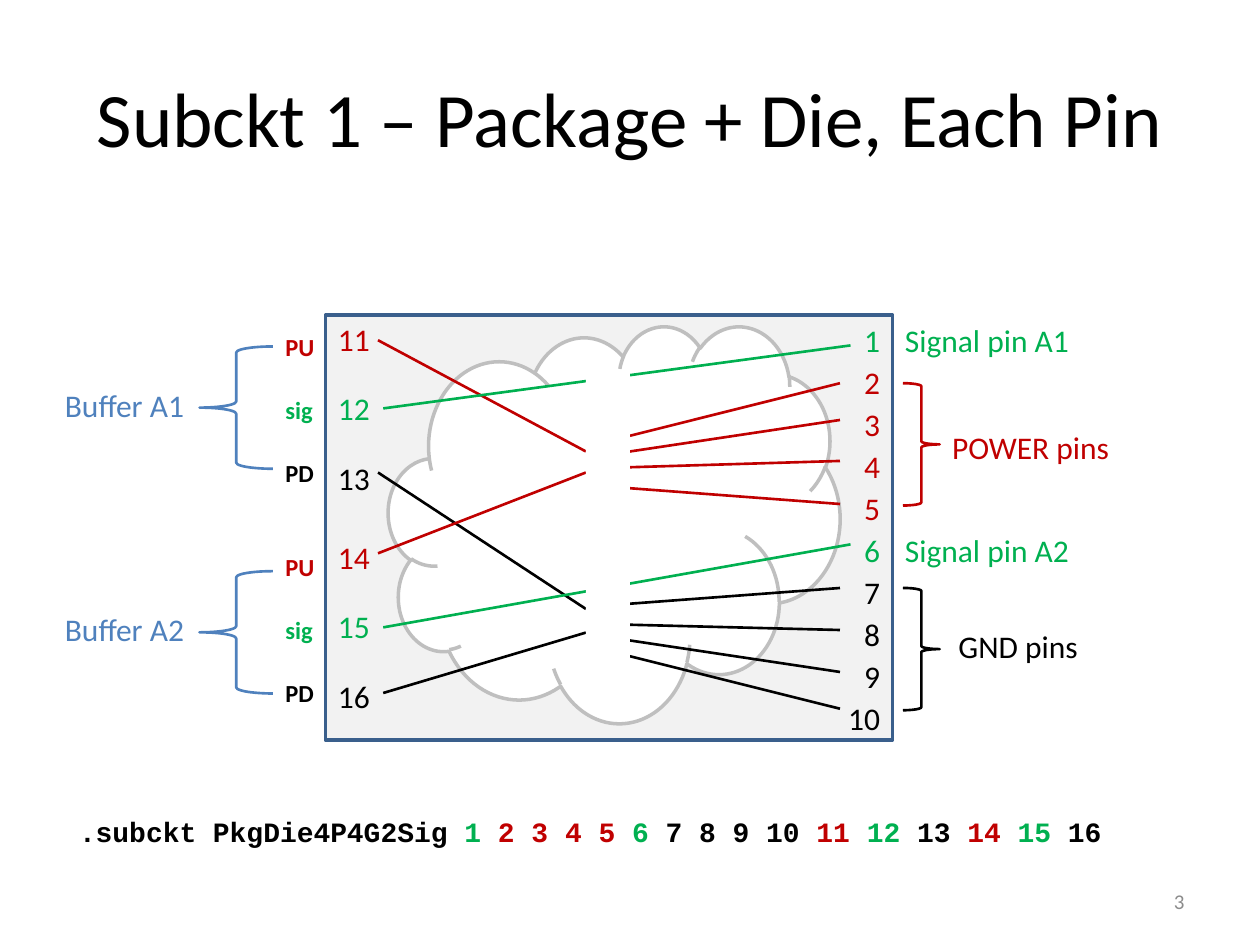
from pptx import Presentation, util as u
from pptx.dml.color import RGBColor
from pptx.enum import shapes, text
from pptx.oxml.ns import qn
from lxml import etree

COLS, ROWS = 240, 180  # slide grid
RED, GREEN, BLACK, BLUE = "C00000", "00B050", "000000", "4F81BD"
MS = shapes.MSO_SHAPE

prs = Presentation()
prs.slide_width, prs.slide_height = u.Inches(10), u.Inches(7.5)


def col(n):
    return round(prs.slide_width * n / COLS)


def row(n):
    return round(prs.slide_height * n / ROWS)


def color(value):
    return RGBColor.from_string(value)


def frame(x, y, w, h):
    return col(x), row(y), col(w), row(h)


def style(obj, values):
    for name, value in values.items():
        setattr(obj, name, value)


def add_run(p, words, ink, size=18, font="Calibri", bold=False):
    r = p.add_run()
    r.text = words
    style(r.font, {"size": u.Pt(size), "name": font, "bold": bold})
    r.font.color.rgb = color(ink)


def label(s, box, paragraphs, align="LEFT", after=0, wrap=False, **font):
    """Each paragraph is a list of (words, colour) runs."""
    tf = s.shapes.add_textbox(*frame(*box)).text_frame
    style(tf, {"word_wrap": wrap, "auto_size": text.MSO_AUTO_SIZE.SHAPE_TO_FIT_TEXT})
    for i, runs in enumerate(paragraphs):
        p = tf.add_paragraph() if i else tf.paragraphs[0]
        style(p, {"alignment": getattr(text.PP_ALIGN, align), "space_after": u.Pt(after)})
        for words, ink in runs:
            add_run(p, words, ink, **font)
    return tf


def shape(s, kind, box, fill=None, line=None, width=1.5):
    sp = s.shapes.add_shape(kind, *frame(*box))
    sp.shadow.inherit = False
    if fill:
        sp.fill.solid()
        sp.fill.fore_color.rgb = color(fill)
    else:
        sp.fill.background()
    if line:
        sp.line.color.rgb = color(line)
        sp.line.width = u.Pt(width)
    else:
        sp.line.fill.background()


def wire(parent, x1, y1, x2, y2, ink):
    c = parent.shapes.add_connector(shapes.MSO_CONNECTOR.STRAIGHT,
                                    col(x1), row(y1), col(x2), row(y2))
    c.line.color.rgb = color(ink)
    c.line.width = u.Pt(1.5)
    etree.SubElement(c._element.spPr, qn("a:effectLst"))


def title(s, box, words):
    sp = s.shapes.title
    style(sp, dict(zip(("left", "top", "width", "height"), frame(*box))))
    sp.text_frame.vertical_anchor = text.MSO_ANCHOR.MIDDLE
    p = sp.text_frame.paragraphs[0]
    p.alignment = text.PP_ALIGN.CENTER
    add_run(p, words, BLACK, size=44)


def pin_color(n):
    if n in (1, 6, 12, 15):
        return GREEN
    return RED if n in (2, 3, 4, 5, 11, 14) else BLACK


def pins(first, last):
    return [[(str(n), pin_color(n))] for n in range(first, last + 1)]


def package(s, box):
    x, y, w, h = box
    shape(s, MS.RECTANGLE, box, "F2F2F2", "3A5F8C", 2)
    shape(s, MS.CLOUD, (x + 12, y + 2, 86, 75.6), "FFFFFF", "BFBFBF", 2)

    # Pin numbers
    label(s, (x + w - 12, y, 12, h), pins(1, 10), "RIGHT", 2.4, True)
    for first, top in ((11, -0.2), (14, 41.3)):
        label(s, (x, y + top, 11, 36.2), pins(first, first + 2), after=18)

    # Die-side wires; the signal wires run through to the package pins
    for pin, x1, y1, x2, y2 in ((11, 10, 4.8, 49.6, 26), (16, 11, 72, 49.6, 60.5),
                                (13, 10, 30, 49.6, 56), (14, 10, 45.4, 49.6, 30),
                                (12, 11, 17.8, 100, 5.8), (15, 11, 59.5, 100, 43.7)):
        wire(s, x + x1, y + y1, x + x2, y + y2, pin_color(pin))

    # Supply wires fan out to the package pins
    for ink, ends in ((RED, ((23, 13), (26, 20), (29, 27.8), (33, 36))),
                      (BLACK, ((65, 75), (62, 68), (59, 60), (55, 52)))):
        group = s.shapes.add_group_shape()
        for y1, y2 in ends:
            wire(group, x + 58, y + y1, x + 98, y + y2, ink)

    # Gap that hides the middle of the wires
    shape(s, MS.RECTANGLE, (x + 49.6, y + 11, 8.4, 57), "FFFFFF")


def pin_names(s, box):
    x, y, w, h = box
    for words, top in (("Signal pin A1", 0), ("Signal pin A2", 40)):
        label(s, (x, y + top, 36.5, 9.6), [[(words, GREEN)]])
    for words, ink, left, top, brace in (("POWER pins", RED, 9, 20.4, 13),
                                         ("GND pins", BLACK, 10.2, 58.3, 52)):
        shape(s, MS.RIGHT_BRACE, (x + 2, y + brace, 7, 23.3), line=ink)
        label(s, (x + left, y + top, w - left, 9.6), [[(words, ink)]])


def buffer(s, box, name, brace):
    x, y, w, h = box
    shape(s, MS.LEFT_BRACE, (x + 28, y + brace, 14, 23.3), line=BLUE)
    label(s, (x, y + brace + 6.3, 28, 9.6), [[(name, BLUE)]])
    for i, (words, ink) in enumerate((("PU", RED), ("sig", GREEN), ("PD", BLACK))):
        label(s, (x + 42, y + i * h / 3, w - 42, 8.2), [[(words, ink)]],
              size=14, bold=True)


def netlist(s, box):
    runs = [(".subckt PkgDie4P4G2Sig", BLACK)]
    runs += [(f" {n}", pin_color(n)) for n in range(1, 17)]
    label(s, box, [runs], size=16, font="Courier New", bold=True)


def page_number(s, box, number):
    tf = label(s, box, [[(number, "8C8C8C")]], "RIGHT", wrap=True, size=12)
    style(tf, {"auto_size": text.MSO_AUTO_SIZE.NONE,
               "vertical_anchor": text.MSO_ANCHOR.MIDDLE})


def main():
    s = prs.slides.add_slide(prs.slide_layouts[5])
    title(s, (12, 7.2, 216, 30), "Subckt 1 – Package + Die, Each Pin")
    package(s, (62, 60, 108, 81))
    pin_names(s, (170, 60, 44, 81))
    buffer(s, (10, 62, 52.4, 36), "Buffer A1", 4)
    buffer(s, (10, 104, 52.4, 36), "Buffer A2", 4.8)
    netlist(s, (12.7, 154, 202.6, 8.9))
    page_number(s, (172, 166.8, 56, 9.6), "3")
    prs.save("out.pptx")


if __name__ == "__main__":
    main()
